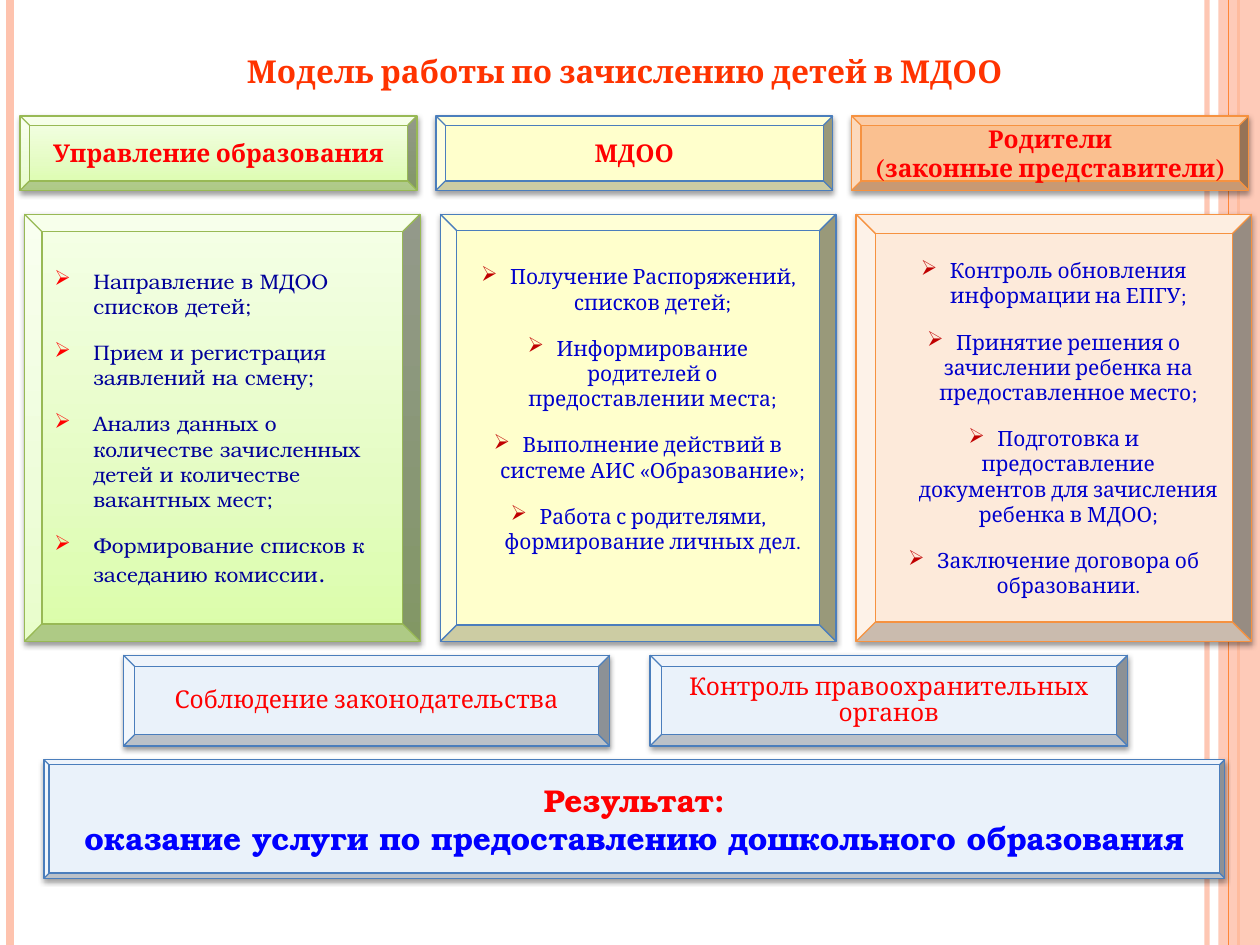
from dataclasses import dataclass

from lxml import etree
from pptx import Presentation
from pptx.dml.color import RGBColor
from pptx.enum.shapes import MSO_CONNECTOR, MSO_SHAPE
from pptx.enum.text import MSO_ANCHOR, PP_ALIGN
from pptx.oxml.ns import qn
from pptx.util import Inches, Pt

BEVEL, RECTANGLE = MSO_SHAPE.BEVEL, MSO_SHAPE.RECTANGLE
STRAIGHT = MSO_CONNECTOR.STRAIGHT
LEFT, CENTER = PP_ALIGN.LEFT, PP_ALIGN.CENTER
MIDDLE = MSO_ANCHOR.MIDDLE

COLUMNS, ROWS, CELL = 100, 75, 0.1
SERIF, BOOK = "Cambria", "TeX Gyre Bonum"
RED, DARK_RED, ORANGE, PINK = "FF0000", "C00000", "FE8637", "FEC3AE"
NAVY, BLUE, OUTLINE, PALE_BLUE = "000099", "0000CC", "4B7EBC", "EAF2FA"
GREEN = [(0, "DAFDA7"), (18, "DFFDB5"), (35, "E4FCC2"), (100, "F5FFE7")]


@dataclass
class Box:
    """A rectangle measured in grid columns and rows."""
    left: float
    top: float
    width: float
    height: float

    def inner(self, left, top, width, height):
        """Return a box placed relative to this one."""
        return Box(self.left + left, self.top + top, width, height)

    def lengths(self):
        """Return left, top, width and height as slide lengths."""
        return [Inches(n * CELL) for n in (self.left, self.top, self.width, self.height)]


@dataclass
class Role:
    """Wording and look of one participant's column."""
    heading: list
    duties: list
    heading_fill: object
    panel_fill: object
    outline: str
    edge: float
    font: str = SERIF
    color: str = BLUE
    bullet: str = DARK_RED
    align: int = CENTER
    hang: float = 0.23
    bottom: float = 0.05
    tail: str = ""


def rgb(value):
    """Turn a hex string into a colour."""
    return RGBColor.from_string(value)


def add_xml(parent, tag, **attributes):
    """Append a DrawingML element."""
    return etree.SubElement(parent, qn(f"a:{tag}"), **attributes)


def add_color(parent, value, alpha=None):
    """Append a colour with an optional opacity in percent."""
    color = add_xml(parent, "srgbClr", val=value)
    if alpha is not None:
        add_xml(color, "alpha", val=str(alpha * 1000))


def paint(shape, fill):
    """Fill a shape with one colour or with gradient stops rising from its foot."""
    if isinstance(fill, str):
        shape.fill.solid()
        shape.fill.fore_color.rgb = rgb(fill)
        return
    shape.fill.gradient()
    gradient = shape._element.spPr.find(qn("a:gradFill"))
    for child in list(gradient):
        gradient.remove(child)
    stops = add_xml(gradient, "gsLst")
    for position, color in fill:
        add_color(add_xml(stops, "gs", pos=str(position * 1000)), color)
    add_xml(gradient, "lin", ang="16200000", scaled="0")


def write(frame, lines, size, font, color, bold=False, align=CENTER):
    """Write one paragraph per line in a common style."""
    frame.word_wrap = True
    frame.text = "\n".join(lines)
    for para in frame.paragraphs:
        para.alignment = align
        for span in para.runs:
            span.font.size, span.font.name, span.font.bold = Pt(size), font, bold
            span.font.color.rgb = rgb(color)


def bevel(page, box, fill, outline, edge=0.125):
    """Add a bevelled plate with a soft shadow and return its text frame."""
    shape = page.shapes.add_shape(BEVEL, *box.lengths())
    shape.adjustments[0] = edge
    paint(shape, fill)
    shape.line.color.rgb = rgb(outline)
    shape.line.width = Pt(0.75)
    shape.shadow.inherit = False
    effects = shape._element.spPr.find(qn("a:effectLst"))
    shadow = add_xml(effects, "outerShdw", blurRad=str(Pt(3.1)), dist=str(Pt(1.6)),
                     dir="5400000", rotWithShape="0")
    add_color(shadow, "000000", 38)
    shape.text_frame.vertical_anchor = MIDDLE
    return shape.text_frame


def rail(page, box, column, color, width, alpha=None):
    """Add a full-height vertical line at a grid column."""
    x, top, _, height = box.inner(column, 0, 0, box.height).lengths()
    line = page.shapes.add_connector(STRAIGHT, x, top, x, top + height)
    line.line.color.rgb = rgb(color)
    line.line.width = Pt(width)
    if alpha:
        add_xml(line._element.spPr.find(".//" + qn("a:srgbClr")), "alpha", val=str(alpha * 1000))
    add_xml(line._element.spPr, "effectLst")


def side_rails(page, box):
    """Draw the vertical stripes at both sides of the slide."""
    rail(page, box, 95.8, PINK, 3, 93)
    rail(page, box, 0.8, PINK, 4.5)
    rail(page, box, 98.3, ORANGE, 1.5)
    band = page.shapes.add_shape(RECTANGLE, *box.inner(96.7, 0, 3.3, box.height).lengths())
    paint(band, PINK)
    add_xml(band._element.spPr.find(".//" + qn("a:srgbClr")), "alpha", val="87000")
    band.line.fill.background()
    band.shadow.inherit = False
    rail(page, box, 97.5, ORANGE, 0.75)


def title(page, box):
    """Write the slide title."""
    frame = page.shapes.add_textbox(*box.lengths()).text_frame
    write(frame, ["Модель работы по зачислению детей в МДОО"], 18, SERIF, "FF3300", True)


def role_column(page, box, role):
    """Place a participant's heading above the panel of duties."""
    heading = bevel(page, box.inner(0, 0, 31.5, 5.9), role.heading_fill, role.outline)
    write(heading, role.heading, 14, SERIF, RED, True)
    panel = bevel(page, box.inner(0.35, 7.8, 31.4, 33.9), role.panel_fill, role.outline, role.edge)
    panel.margin_bottom = Inches(role.bottom)
    write(panel, role.duties, 12, role.font, role.color, align=role.align)
    for para in panel.paragraphs:
        para.space_before = para.space_after = Pt(6)
        props = para._p.get_or_add_pPr()
        props.set("marL", str(Inches(role.hang)))
        props.set("indent", str(-Inches(role.hang)))
        add_color(add_xml(props, "buClr"), role.bullet)
        add_xml(props, "buChar", char="➢")
    if role.tail:
        span = panel.paragraphs[-1].add_run()
        span.text = role.tail
        span.font.size, span.font.name = Pt(14), role.font
        span.font.color.rgb = rgb(role.color)


def condition(page, box, text):
    """Place one condition plate."""
    frame = bevel(page, box, PALE_BLUE, OUTLINE)
    write(frame, [text], 14, SERIF, RED)
    frame.paragraphs[0].line_spacing = 0.9
    frame.paragraphs[0].space_before = Pt(10)


def result(page, box):
    """Place the result plate."""
    frame = bevel(page, box, PALE_BLUE, OUTLINE, 0.043)
    lines = ["Результат:", "оказание услуги по предоставлению дошкольного образования"]
    write(frame, lines, 18, BOOK, RED, True)
    frame.paragraphs[1].runs[0].font.color.rgb = rgb("0000FF")


ROLES = [
    Role(["Управление образования"],
         ["Направление в МДОО списков детей;", "Прием и регистрация заявлений на смену;",
          "Анализ данных о количестве зачисленных детей и количестве вакантных мест;",
          "Формирование списков к заседанию комиссии"],
         GREEN, GREEN, "98B955", 0.044, BOOK, NAVY, RED, LEFT, 0.31, tail="."),
    Role(["МДОО"],
         ["Получение Распоряжений, списков детей;", "Информирование родителей о предоставлении места;",
          "Выполнение действий в системе АИС «Образование»;",
          "Работа с родителями, формирование личных дел."],
         "FFFFCC", "FFFFCC", OUTLINE, 0.041, bottom=0.35),
    Role(["Родители", "(законные представители)"],
         ["Контроль обновления информации на ЕПГУ;",
          "Принятие решения о зачислении ребенка на предоставленное место;",
          "Подготовка и предоставление документов для зачисления ребенка в МДОО;",
          "Заключение договора об образовании."],
         "FAC090", "FDEADA", "F69240", 0.049),
]


def main():
    """Build the deck and save it."""
    deck = Presentation()
    deck.slide_width, deck.slide_height = Inches(COLUMNS * CELL), Inches(ROWS * CELL)
    page = deck.slides.add_slide(deck.slide_layouts[6])
    whole = Box(0, 0, COLUMNS, ROWS)
    side_rails(page, whole)
    title(page, whole.inner(9.8, 3.6, 79.6, 7.1))
    for index, role in enumerate(ROLES):
        role_column(page, whole.inner(1.6 + 33 * index, 9.2, 31.75, 41.7), role)
    result(page, whole.inner(3.5, 60.3, 93.7, 9.4))
    condition(page, whole.inner(9.8, 52, 38.6, 7.2), "Соблюдение законодательства")
    condition(page, whole.inner(51.6, 52, 37.9, 7.2), "Контроль правоохранительных органов")
    deck.save("out.pptx")


if __name__ == "__main__":
    main()
